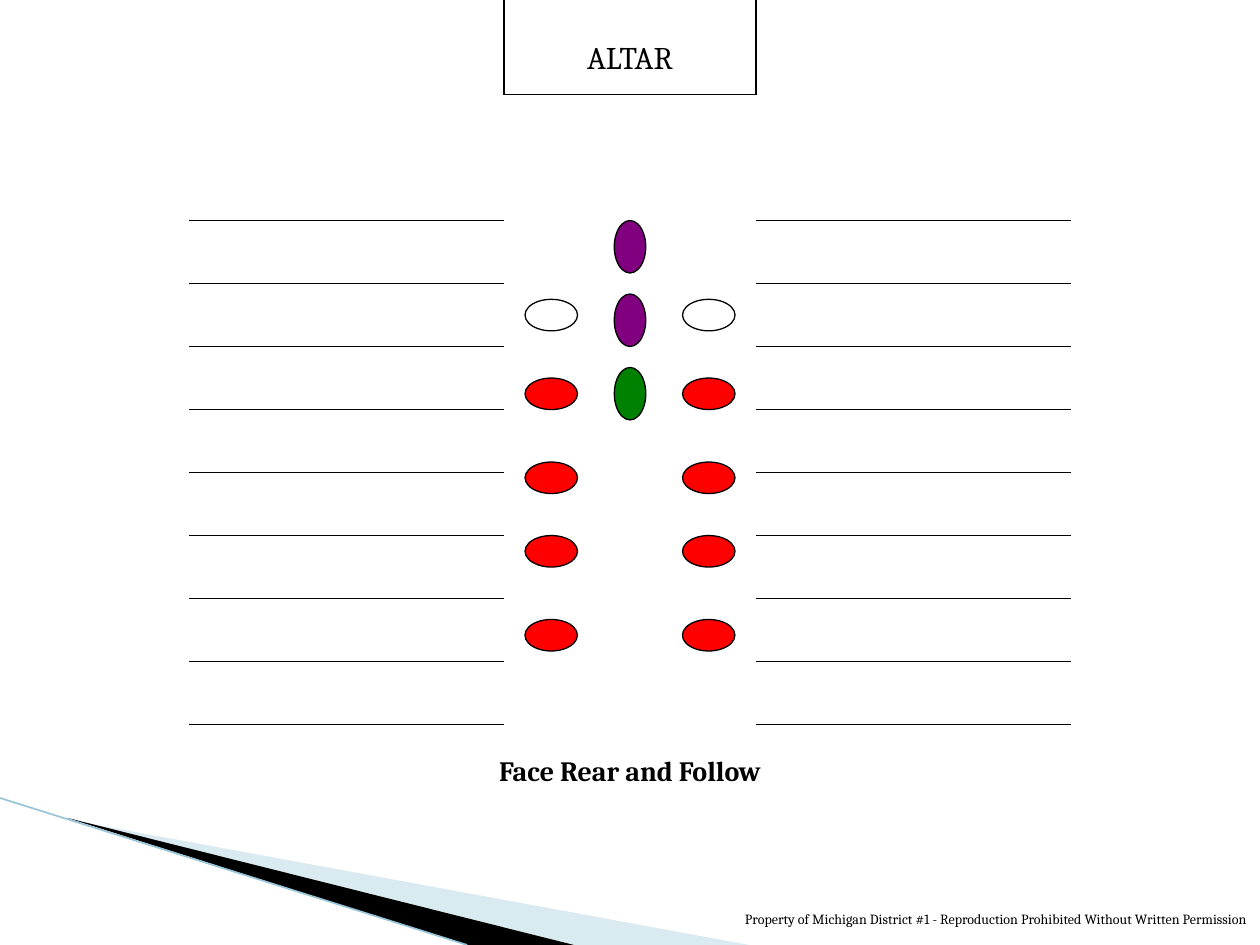
from pptx import Presentation
from pptx.dml.color import RGBColor
from pptx.enum import shapes as kinds, text as txt
from pptx.oxml.ns import qn
from pptx.util import Pt
from lxml import etree

BLACK = RGBColor(0x00, 0x00, 0x00)
WHITE = RGBColor(0xFF, 0xFF, 0xFF)
RED = RGBColor(0xFF, 0x00, 0x00)
GREEN = RGBColor(0x00, 0x80, 0x00)
PURPLE = RGBColor(0x80, 0x00, 0x80)
PALE = RGBColor(0xA0, 0xCB, 0xDC)
TEAL = RGBColor(0x97, 0xC5, 0xD8)
ALIGN = txt.PP_ALIGN


def rule(slide, x1, y1, x2, y2, color=BLACK, width=0.75):
    line = slide.shapes.add_connector(
        kinds.MSO_CONNECTOR.STRAIGHT, Pt(x1), Pt(y1), Pt(x2), Pt(y2))
    line.line.color.rgb = color
    line.line.width = Pt(width)
    etree.SubElement(line._element.spPr, qn("a:effectLst"))


def label(slide, x, y, w, h, words, size, align=ALIGN.CENTER, bold=False):
    frame = slide.shapes.add_textbox(Pt(x), Pt(y), Pt(w), Pt(h)).text_frame
    frame.word_wrap = True
    par = frame.paragraphs[0]
    par.text = words
    par.alignment = align
    par.font.name = "Cambria"
    par.font.size = Pt(size)
    par.font.bold = bold
    par.font.color.rgb = BLACK


def wedge(slide, points, color, alpha=None):
    pen = slide.shapes.build_freeform(Pt(points[0][0]), Pt(points[0][1]))
    pen.add_line_segments([(Pt(x), Pt(y)) for x, y in points[1:]])
    shape = pen.convert_to_shape()
    shape.shadow.inherit = False
    shape.fill.solid()
    shape.fill.fore_color.rgb = color
    shape.line.fill.background()
    if alpha:
        tint = shape._element.spPr.find(qn("a:solidFill"))[0]
        etree.SubElement(tint, qn("a:alpha"), val=str(alpha * 1000))


def corner(slide, x, y):
    wedge(slide, [(x + 39.6, y + 12.5), (x + 428, y + 84), (x + 328, y + 84)],
          PALE, 40)
    wedge(slide, [(x + 38.2, y + 11.3), (x + 328, y + 84), (x + 267, y + 84)],
          BLACK)
    rule(slide, x, y, x + 267, y + 84, TEAL, 0.95)


def altar(slide, x, y, w, h):
    rule(slide, x, y + h, x + w, y + h)
    for side in (x, x + w):
        rule(slide, side, y + h, side, y)
    label(slide, x + 21, y + 18, w - 42, 29, "ALTAR", 18)


def pews(slide, x, y, w, h, count=9):
    for row in range(count):
        top = y + row * h / (count - 1)
        rule(slide, x, top, x + w, top)


def person(slide, x, y, color, turn=0):
    oval = slide.shapes.add_shape(
        kinds.MSO_SHAPE.OVAL, Pt(x), Pt(y), Pt(30), Pt(18))
    oval.shadow.inherit = False
    oval.rotation = turn
    oval.fill.solid()
    oval.fill.fore_color.rgb = color
    oval.line.color.rgb = BLACK
    oval.line.width = Pt(0.75)


def aisle(slide, x, y, w):
    ranks = [(45, WHITE, 180), (90, RED, 180), (138, RED, 180),
             (180, RED, 180), (228, RED, 0)]
    for left in (x + 12, x + w - 42):
        for top, color, turn in ranks:
            person(slide, left, y + top, color, turn)
    lead = [(PURPLE, 270), (PURPLE, 270), (GREEN, 90)]
    for row, (color, turn) in enumerate(lead):
        person(slide, x + w / 2 - 15, y + 6 + 42 * row, color, turn)


def main():
    deck = Presentation()
    deck.slide_width, deck.slide_height = Pt(720), Pt(540)
    slide = deck.slides.add_slide(deck.slide_layouts[6])
    corner(slide, 0, 456)
    altar(slide, 288, 0, 144, 54)
    for x in (432, 108):
        pews(slide, x, 126, 180, 288)
    aisle(slide, 288, 126, 144)
    label(slide, 0, 427, 720, 27, "Face Rear and Follow", 16, bold=True)
    label(slide, 372, 517, 348, 23,
          "Property of Michigan District #1 - Reproduction Prohibited "
          "Without Written Permission", 8, ALIGN.RIGHT)
    deck.save("out.pptx")


if __name__ == "__main__":
    main()
